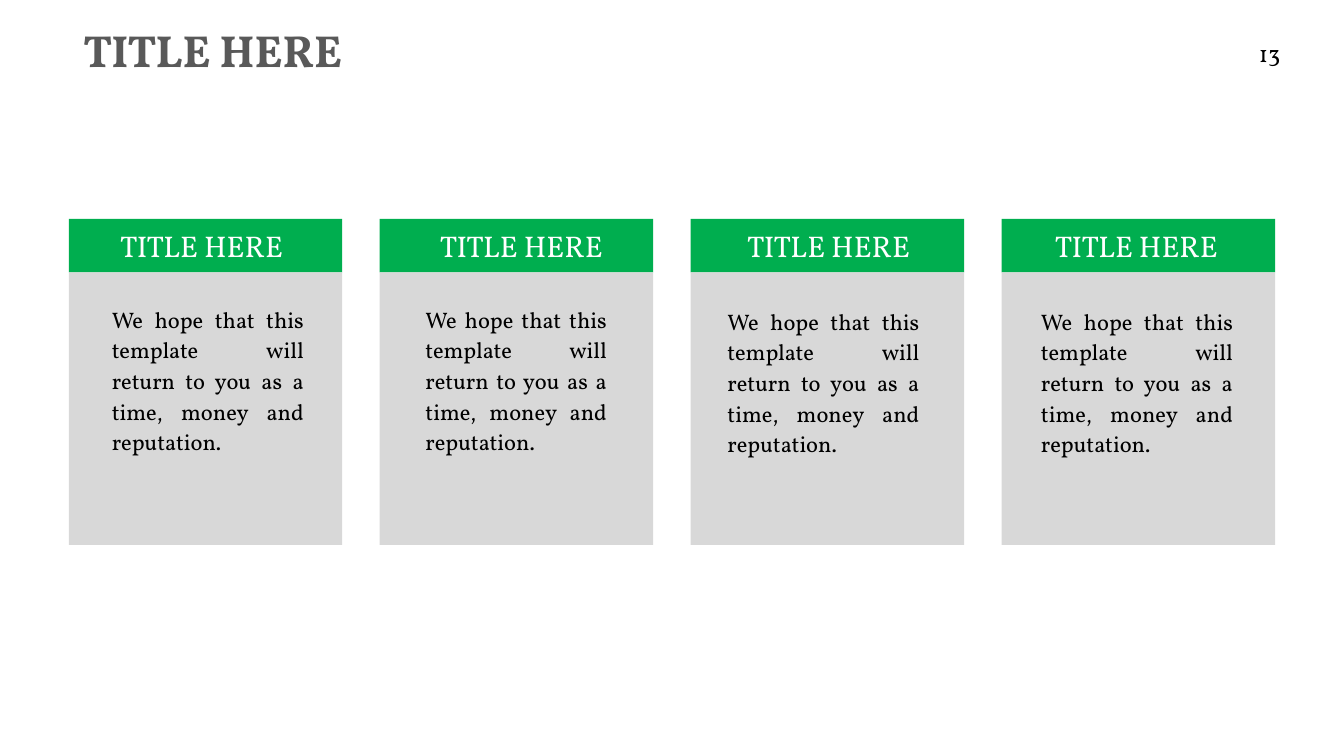
from pptx import Presentation
from pptx.dml.color import RGBColor
from pptx.enum.shapes import MSO_SHAPE
from pptx.enum.text import PP_ALIGN
from pptx.util import Inches, Pt

RECT = MSO_SHAPE.RECTANGLE
LEFT, CENTER, JUSTIFY = PP_ALIGN.LEFT, PP_ALIGN.CENTER, PP_ALIGN.JUSTIFY

COLORS = {
    "green": "00AE4F",
    "panel": "D8D8D8",
    "heading": "595959",
    "white": "FFFFFF",
    "black": "000000",
}
HEADING = "TITLE HERE"
BODY = "We hope that this template will return to you as a time, money and reputation."

CARD_LEFT, CARD_STEP, CARD_WIDTH = 0.72, 3.253, 2.86
CARD_TEXTS = [
    ((0.82, 2.58), (1.06, 3.11, 2.23)),
    ((4.34, 2.23), (4.34, 3.11, 2.12)),
    ((7.5, 2.34), (7.5, 3.13, 2.23)),
    ((10.66, 2.46), (10.78, 3.13, 2.23)),
]


class Deck:
    font = "Vollkorn"

    def __init__(self, slide):
        self.slide = slide

    def color(self, name):
        return RGBColor.from_string(COLORS[name])

    def box(self, x, y, w, h, fill):
        s = self.slide.shapes.add_shape(RECT, Inches(x), Inches(y), Inches(w), Inches(h))
        s.shadow.inherit = False
        s.fill.solid()
        s.fill.fore_color.rgb = self.color(fill)
        s.line.fill.background()

    def text(self, x, y, w, h, text, size, color, align=LEFT, bold=False, spacing=1.0):
        s = self.slide.shapes.add_textbox(Inches(x), Inches(y), Inches(w), Inches(h))
        tf = s.text_frame
        tf.word_wrap = True
        tf.margin_left = tf.margin_right = Inches(0.11)
        tf.margin_top = tf.margin_bottom = Inches(0.05)
        tf.text = text
        p = tf.paragraphs[0]
        p.alignment = align
        p.line_spacing = spacing
        font = p.runs[0].font
        font.name = self.font
        font.size = Pt(size)
        font.bold = bold
        font.color.rgb = self.color(color)


def main():
    prs = Presentation()
    prs.slide_width, prs.slide_height = Inches(14.06), Inches(7.91)
    deck = Deck(prs.slides.add_slide(prs.slide_layouts[6]))

    for i, ((head_x, head_w), (body_x, body_y, body_w)) in enumerate(CARD_TEXTS):
        card_x = CARD_LEFT + i * CARD_STEP
        deck.box(card_x, 2.29, CARD_WIDTH, 0.56, "green")
        deck.box(card_x, 2.85, CARD_WIDTH, 2.85, "panel")
        deck.text(head_x, 2.33, head_w, 0.49, HEADING, 22.5, "white", CENTER)
        deck.text(body_x, body_y, body_w, 1.72, BODY, 16.9, "black", JUSTIFY, spacing=1.14)

    deck.text(0.76, 0.19, 6.56, 0.67, HEADING, 33.8, "heading", bold=True)
    deck.text(13.06, 0.36, 0.64, 0.54, "13", 18, "black")
    prs.save("out.pptx")


if __name__ == "__main__":
    main()
